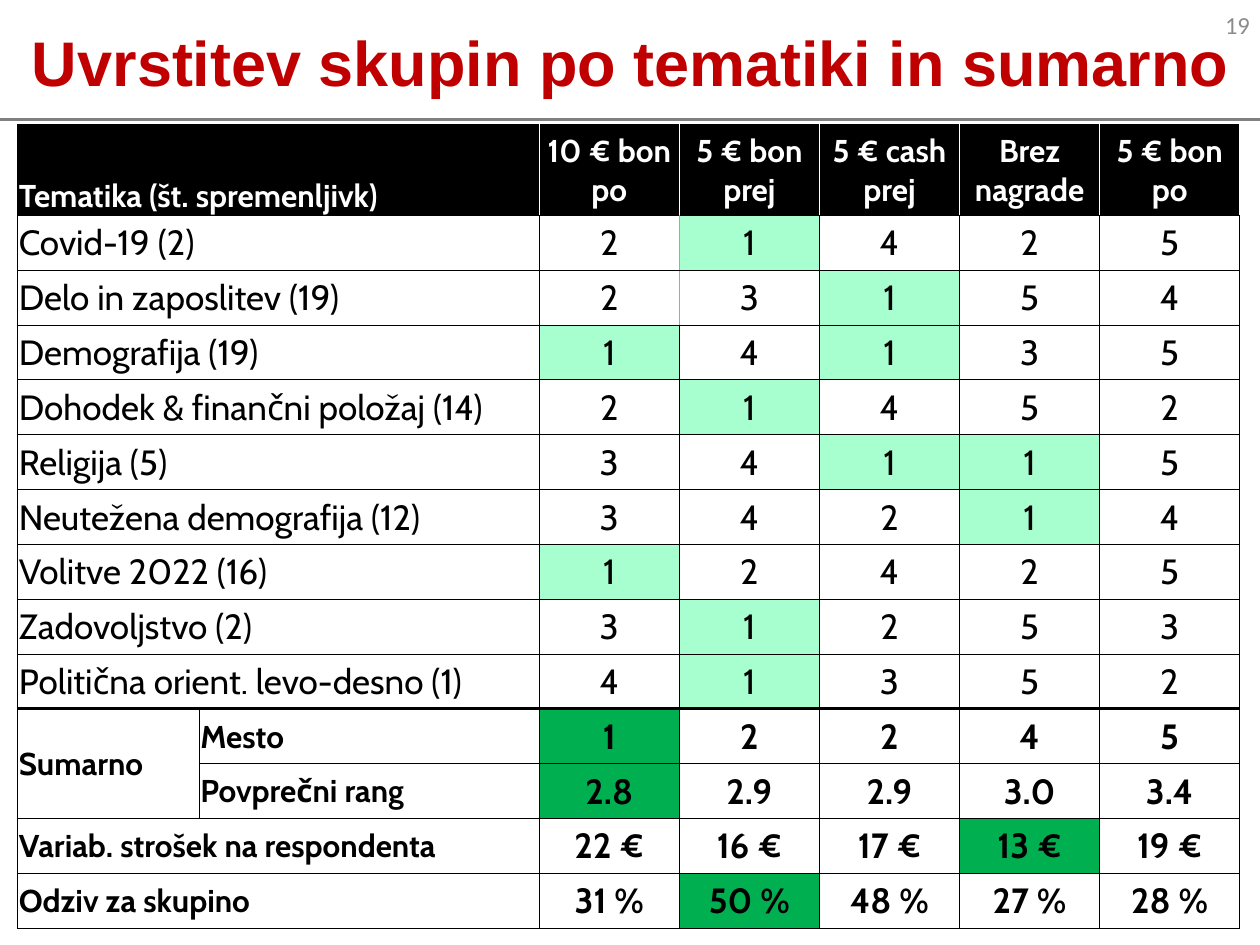
"""Build a slide ranking the incentive groups by topic and in summary."""
from lxml import etree
from pptx import Presentation
from pptx import util as u
from pptx.dml.color import RGBColor
from pptx.enum import text
from pptx.oxml.ns import qn

TITLE = "Uvrstitev skupin po tematiki in sumarno"
PAGE = "19"
HEADER = ("Tematika (št. spremenljivk)", "",
          "10 € bon po", "5 € bon prej", "5 € cash prej", "Brez nagrade", "5 € bon po")
TOPICS = [
    ("Covid-19 (2)", 2, 1, 4, 2, 5),
    ("Delo in zaposlitev (19)", 2, 3, 1, 5, 4),
    ("Demografija (19)", 1, 4, 1, 3, 5),
    ("Dohodek & finančni položaj (14)", 2, 1, 4, 5, 2),
    ("Religija (5)", 3, 4, 1, 1, 5),
    ("Neutežena demografija (12)", 3, 4, 2, 1, 4),
    ("Volitve 2022 (16)", 1, 2, 4, 2, 5),
    ("Zadovoljstvo (2)", 3, 1, 2, 5, 3),
    ("Politična orient. levo-desno (1)", 4, 1, 3, 5, 2),
]
SUMMARY = [
    ("Sumarno", "Mesto", "1", "2", "2", "4", "5"),
    ("", "Povprečni rang", "2.8", "2.9", "2.9", "3.0", "3.4"),
    ("Variab. strošek na respondenta", "", "22 €", "16 €", "17 €", "13 €", "19 €"),
    ("Odziv za skupino", "", "31 %", "50 %", "48 %", "27 %", "28 %"),
]
BEST_COLUMNS = (2, 2, 5, 3)

WHITE = RGBColor(0xFF, 0xFF, 0xFF)
BLACK = RGBColor(0x00, 0x00, 0x00)
RED = RGBColor(0xC0, 0x00, 0x00)
RULE_GRAY = RGBColor(0x80, 0x80, 0x80)
PAGE_GRAY = RGBColor(0x8C, 0x8C, 0x8C)
EDGE_GRAY = RGBColor(0xA6, 0xA6, 0xA6)
LIGHT_GREEN = RGBColor(0xA7, 0xFF, 0xCF)
GREEN = RGBColor(0x00, 0xB0, 0x50)

ROWS = [HEADER] + [(topic, "", *map(str, ranks)) for topic, *ranks in TOPICS] + SUMMARY
SUMMARY_START = 1 + len(TOPICS)
TABLE_WIDTH, TABLE_HEIGHT = 9.7, 6.38
LABEL_WIDTHS = [1.44, 2.7]
HEADER_HEIGHT = 0.72
GROUPS = len(HEADER) - len(LABEL_WIDTHS)
COLUMN_WIDTHS = LABEL_WIDTHS + [(TABLE_WIDTH - sum(LABEL_WIDTHS)) / GROUPS] * GROUPS
BODY_ROWS = len(ROWS) - 1
ROW_HEIGHTS = [HEADER_HEIGHT] + [(TABLE_HEIGHT - HEADER_HEIGHT) / BODY_ROWS] * BODY_ROWS


def style_font(paragraph, name, size, color, bold=False):
    font = paragraph.font
    font.name, font.size, font.bold = name, u.Pt(size), bold
    font.color.rgb = color


def vertical_edge(row, boundary):
    if row == 0 and boundary >= 2:
        return WHITE, 1
    if row in (1, 2) and boundary == 3:
        return EDGE_GRAY, 1
    return BLACK, 0.5


def horizontal_edge(boundary):
    return BLACK, 2.25 if boundary == SUMMARY_START else 0.5


def draw_borders(cell, row, column):
    edges = {
        "a:lnL": vertical_edge(row, column),
        "a:lnR": vertical_edge(row, column + 1),
        "a:lnT": horizontal_edge(row),
        "a:lnB": horizontal_edge(row + 1),
    }
    properties = cell._tc.get_or_add_tcPr()
    for tag, (color, width) in edges.items():
        line = etree.SubElement(properties, qn(tag), w=str(u.Pt(width)))
        fill = etree.SubElement(line, qn("a:solidFill"))
        etree.SubElement(fill, qn("a:srgbClr"), val=str(color))


def cell_fill(row, column):
    if row == 0:
        return BLACK
    if row >= SUMMARY_START:
        return GREEN if column == BEST_COLUMNS[row - SUMMARY_START] else None
    return LIGHT_GREEN if column >= 2 and ROWS[row][column] == "1" else None


def format_cell(cell, row, column):
    is_label = column < 2
    is_summary = row >= SUMMARY_START
    cell.text = ROWS[row][column]
    cell.margin_left = cell.margin_right = cell.margin_top = u.Inches(0.01)
    cell.margin_bottom = 0
    cell.vertical_anchor = (text.MSO_ANCHOR.BOTTOM if row == 0 and is_label
                            else text.MSO_ANCHOR.MIDDLE)
    paragraph = cell.text_frame.paragraphs[0]
    paragraph.alignment = text.PP_ALIGN.LEFT if is_label else text.PP_ALIGN.CENTER
    size = 18 if row == 0 or (is_summary and is_label) else 20
    style_font(paragraph, "Cabin", size, WHITE if row == 0 else BLACK, row == 0 or is_summary)
    draw_borders(cell, row, column)
    color = cell_fill(row, column)
    if color is None:
        cell.fill.background()
    else:
        cell.fill.solid()
        cell.fill.fore_color.rgb = color


def add_title(slide):
    title = slide.shapes.title
    title.left, title.top = u.Inches(-0.03), u.Inches(-0.04)
    title.width, title.height = u.Inches(10.07), u.Inches(0.99)
    title.line.color.rgb, title.line.width = RULE_GRAY, u.Pt(1.5)
    title.text = TITLE
    title.text_frame.auto_size = text.MSO_AUTO_SIZE.NONE
    title.text_frame.vertical_anchor = text.MSO_ANCHOR.MIDDLE
    paragraph = title.text_frame.paragraphs[0]
    paragraph.alignment, paragraph.line_spacing = text.PP_ALIGN.CENTER, 1.1
    style_font(paragraph, "Arial", 36, RED, True)


def add_page_number(slide):
    box = slide.shapes.add_textbox(u.Inches(9.53), 0, u.Inches(0.47), u.Inches(0.4))
    frame = box.text_frame
    frame.text, frame.word_wrap = PAGE, True
    frame.vertical_anchor = text.MSO_ANCHOR.MIDDLE
    frame.margin_left = frame.margin_right = u.Inches(0.08)
    frame.margin_top = frame.margin_bottom = u.Inches(0.08)
    frame.paragraphs[0].alignment = text.PP_ALIGN.RIGHT
    style_font(frame.paragraphs[0], "Calibri", 14, PAGE_GRAY)


def add_ranking(slide):
    table = slide.shapes.add_table(
        len(ROWS), len(COLUMN_WIDTHS), u.Inches(0.14), u.Inches(0.99),
        u.Inches(TABLE_WIDTH), u.Inches(TABLE_HEIGHT)).table
    table.first_row = table.horz_banding = False
    for column, width in zip(table.columns, COLUMN_WIDTHS):
        column.width = u.Inches(width)
    for row, height in zip(table.rows, ROW_HEIGHTS):
        row.height = u.Inches(height)
    for row, values in enumerate(ROWS):
        for column in range(len(values)):
            format_cell(table.cell(row, column), row, column)
        if not values[1]:
            table.cell(row, 0).merge(table.cell(row, 1))
    table.cell(SUMMARY_START, 0).merge(table.cell(SUMMARY_START + 1, 0))


def main():
    deck = Presentation()
    deck.slide_width, deck.slide_height = u.Inches(10), u.Inches(7.5)
    slide = deck.slides.add_slide(deck.slide_layouts.get_by_name("Title Only"))
    add_title(slide)
    add_page_number(slide)
    add_ranking(slide)
    deck.save("out.pptx")


if __name__ == "__main__":
    main()
